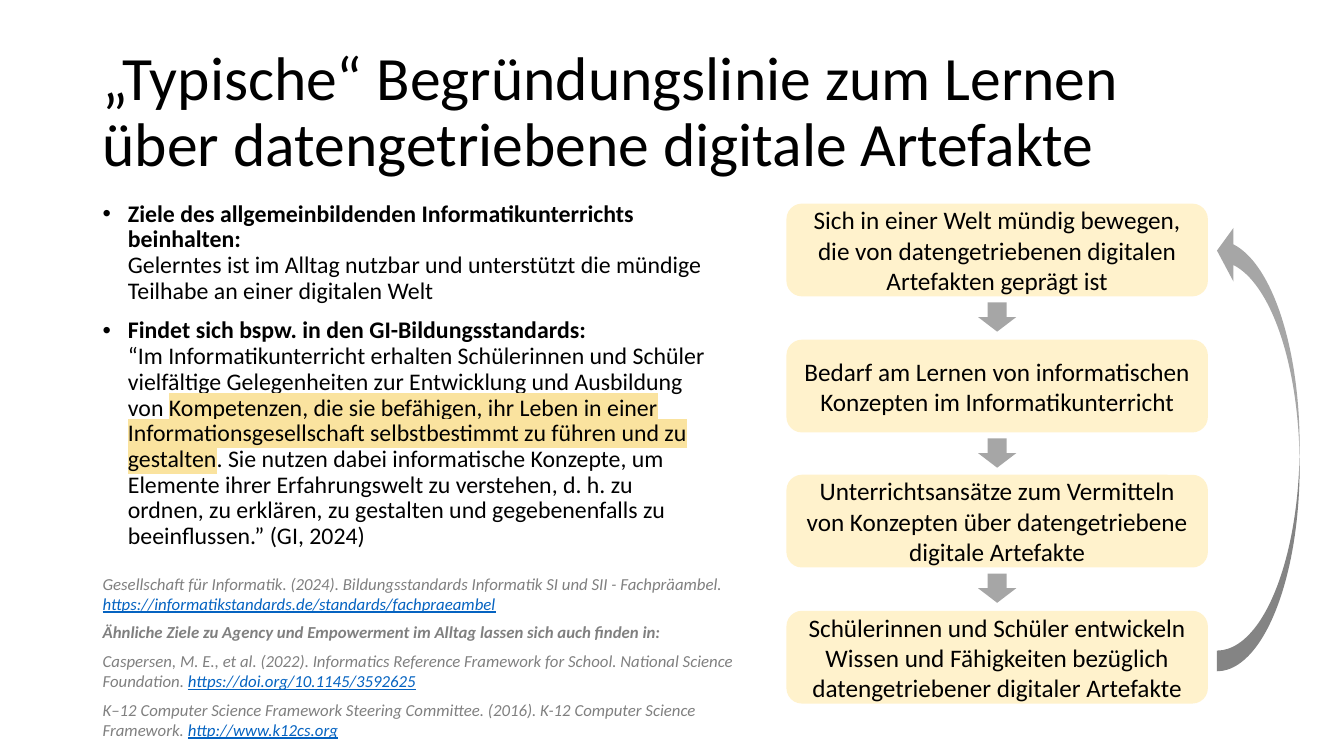
from typing import NamedTuple, Optional

import pptx
import pptx.dml.color
import pptx.enum.shapes
import pptx.enum.text
import pptx.oxml
import pptx.oxml.ns
import pptx.util

RGBColor = pptx.dml.color.RGBColor
MSO_SHAPE = pptx.enum.shapes.MSO_SHAPE
MSO_ANCHOR = pptx.enum.text.MSO_ANCHOR
PP_ALIGN = pptx.enum.text.PP_ALIGN

EMU_PER_PX = 9144
FONT = "Calibri"
BLACK = RGBColor(0x00, 0x00, 0x00)
GREY = RGBColor(0x80, 0x80, 0x80)
ARROW_GREY = RGBColor(0xA6, 0xA6, 0xA6)
CREAM = RGBColor(0xFF, 0xF2, 0xCC)
MARKER = RGBColor(0xFA, 0xE3, 0x9F)
LINK_BLUE = RGBColor(0x05, 0x63, 0xC1)


class Box(NamedTuple):
    left: int
    top: int
    width: int
    height: int


class Run(NamedTuple):
    text: str
    color: RGBColor = BLACK
    bold: bool = False
    italic: bool = False
    underline: bool = False
    highlight: Optional[RGBColor] = None
    break_after: bool = False


def citation(text: str, bold: bool = False) -> Run:
    return Run(text, GREY, bold=bold, italic=True)


def address(text: str) -> Run:
    return Run(text, LINK_BLUE, italic=True, underline=True)


TITLE = [[Run("„Typische“ Begründungslinie zum Lernen über datengetriebene digitale Artefakte")]]
GOALS = [
    [
        Run("Ziele des allgemeinbildenden Informatikunterrichts beinhalten:", bold=True, break_after=True),
        Run("Gelerntes ist im Alltag nutzbar und unterstützt die mündige Teilhabe an einer digitalen Welt"),
    ],
    [
        Run("Findet sich bspw. in den GI-Bildungsstandards:", bold=True, break_after=True),
        Run("“Im Informatikunterricht erhalten Schülerinnen und Schüler vielfältige Gelegenheiten "
            "zur Entwicklung und Ausbildung von "),
        Run("Kompetenzen, die sie befähigen, ihr Leben in einer Informationsgesellschaft "
            "selbstbestimmt zu führen und zu gestalten", highlight=MARKER),
        Run(". Sie nutzen dabei informatische Konzepte, um Elemente ihrer Erfahrungswelt zu "
            "verstehen, d. h. zu ordnen, zu erklären, zu gestalten und gegebenenfalls zu "
            "beeinflussen.” (GI, 2024)"),
    ],
]
REFERENCES = [
    [
        citation("Gesellschaft für Informatik. (2024). Bildungsstandards Informatik SI und SII - Fachpräambel. "),
        address("https://informatikstandards.de/standards/fachpraeambel"),
    ],
    [citation("Ähnliche Ziele zu Agency und Empowerment im Alltag lassen sich auch finden in:", bold=True)],
    [
        citation("Caspersen, M. E., et al. (2022). Informatics Reference Framework for School. "
                 "National Science Foundation. "),
        address("https://doi.org/10.1145/3592625"),
    ],
    [
        citation("K–12 Computer Science Framework Steering Committee. (2016). "
                 "K-12 Computer Science Framework. "),
        address("http://www.k12cs.org"),
    ],
]
STEPS = [
    "Sich in einer Welt mündig bewegen, die von datengetriebenen digitalen Artefakten geprägt ist",
    "Bedarf am Lernen von informatischen Konzepten im Informatikunterricht",
    "Unterrichtsansätze zum Vermitteln von Konzepten über datengetriebene digitale Artefakte",
    "Schülerinnen und Schüler entwickeln Wissen und Fähigkeiten bezüglich datengetriebener digitaler Artefakte",
]
FIRST_STEP_TOP = 202
LAST_STEP_TOP = 606
ARROW_OFFSET = 98


def px(value: int) -> int:
    return pptx.util.Emu(value * EMU_PER_PX)


def place(box: Box) -> list[int]:
    return [px(value) for value in box]


def add_run(paragraph, content: Run, size: int) -> None:
    run = paragraph.add_run()
    run.text = content.text
    font = run.font
    font.name = FONT
    font.size = pptx.util.Pt(size)
    font.bold = content.bold
    font.italic = content.italic
    font.underline = content.underline
    font.color.rgb = content.color
    if content.highlight is not None:
        highlight = pptx.oxml.parse_xml(
            f'<a:highlight {pptx.oxml.ns.nsdecls("a")}><a:srgbClr val="{content.highlight}"/></a:highlight>'
        )
        run.font.fill
        run._r.get_or_add_rPr().find(pptx.oxml.ns.qn("a:solidFill")).addnext(highlight)
    if content.break_after:
        paragraph.add_line_break()


def write_text(
    shape,
    paragraphs: list[list[Run]],
    *,
    size: int,
    anchor=MSO_ANCHOR.TOP,
    align=PP_ALIGN.LEFT,
    line_spacing: float = 1.0,
    space_before: int = 0,
    space_after: int = 0,
    bullet_indent: int = 0,
) -> None:
    frame = shape.text_frame
    frame.word_wrap = True
    frame.vertical_anchor = anchor
    for index, runs in enumerate(paragraphs):
        paragraph = frame.add_paragraph() if index else frame.paragraphs[0]
        paragraph.alignment = align
        paragraph.line_spacing = line_spacing
        paragraph.space_before = pptx.util.Pt(space_before)
        paragraph.space_after = pptx.util.Pt(space_after)
        if bullet_indent:
            properties = paragraph._p.get_or_add_pPr()
            properties.set("marL", str(px(bullet_indent)))
            properties.set("indent", str(-px(bullet_indent)))
            for tag, name, value in (("buFont", "typeface", "Arial"), ("buChar", "char", "•")):
                properties.append(pptx.oxml.parse_xml(
                    f'<a:{tag} {pptx.oxml.ns.nsdecls("a")} {name}="{value}"/>'
                ))
        for content in runs:
            add_run(paragraph, content, size)


def add_filled_shape(slide, kind, box: Box, color: RGBColor):
    shape = slide.shapes.add_shape(kind, *place(box))
    shape.shadow.inherit = False
    shape.fill.solid()
    shape.fill.fore_color.rgb = color
    shape.line.fill.background()
    return shape


def add_steps(slide) -> None:
    for index, text in enumerate(STEPS):
        top = FIRST_STEP_TOP + round((LAST_STEP_TOP - FIRST_STEP_TOP) * index / (len(STEPS) - 1))
        step = add_filled_shape(slide, MSO_SHAPE.ROUNDED_RECTANGLE, Box(780, top, 418, 92), CREAM)
        write_text(step, [[Run(text)]], size=18, anchor=MSO_ANCHOR.MIDDLE, align=PP_ALIGN.CENTER)
        if index < len(STEPS) - 1:
            add_filled_shape(slide, MSO_SHAPE.DOWN_ARROW, Box(970, top + ARROW_OFFSET, 38, 29), ARROW_GREY)


def add_return_arrow(slide) -> None:
    arrow = add_filled_shape(slide, MSO_SHAPE.CURVED_LEFT_ARROW, Box(1207, 222, 82, 444), ARROW_GREY)
    for index, value in enumerate((0.25, 0.65, 0.2)):
        arrow.adjustments[index] = value
    arrow._element.spPr.get_or_add_xfrm().set("flipV", "1")


def main() -> None:
    presentation = pptx.Presentation()
    presentation.slide_width = px(1333)
    presentation.slide_height = px(750)
    slide = presentation.slides.add_slide(presentation.slide_layouts[6])
    title = slide.shapes.add_textbox(*place(Box(92, 40, 1150, 145)))
    write_text(title, TITLE, size=44, anchor=MSO_ANCHOR.MIDDLE, line_spacing=0.9)
    goals = slide.shapes.add_textbox(*place(Box(92, 195, 621, 344)))
    write_text(goals, GOALS, size=17, line_spacing=0.9, space_before=10, bullet_indent=25)
    add_steps(slide)
    add_return_arrow(slide)
    references = slide.shapes.add_textbox(*place(Box(92, 564, 657, 177)))
    write_text(references, REFERENCES, size=12, space_after=6)
    presentation.save("out.pptx")


if __name__ == "__main__":
    main()
